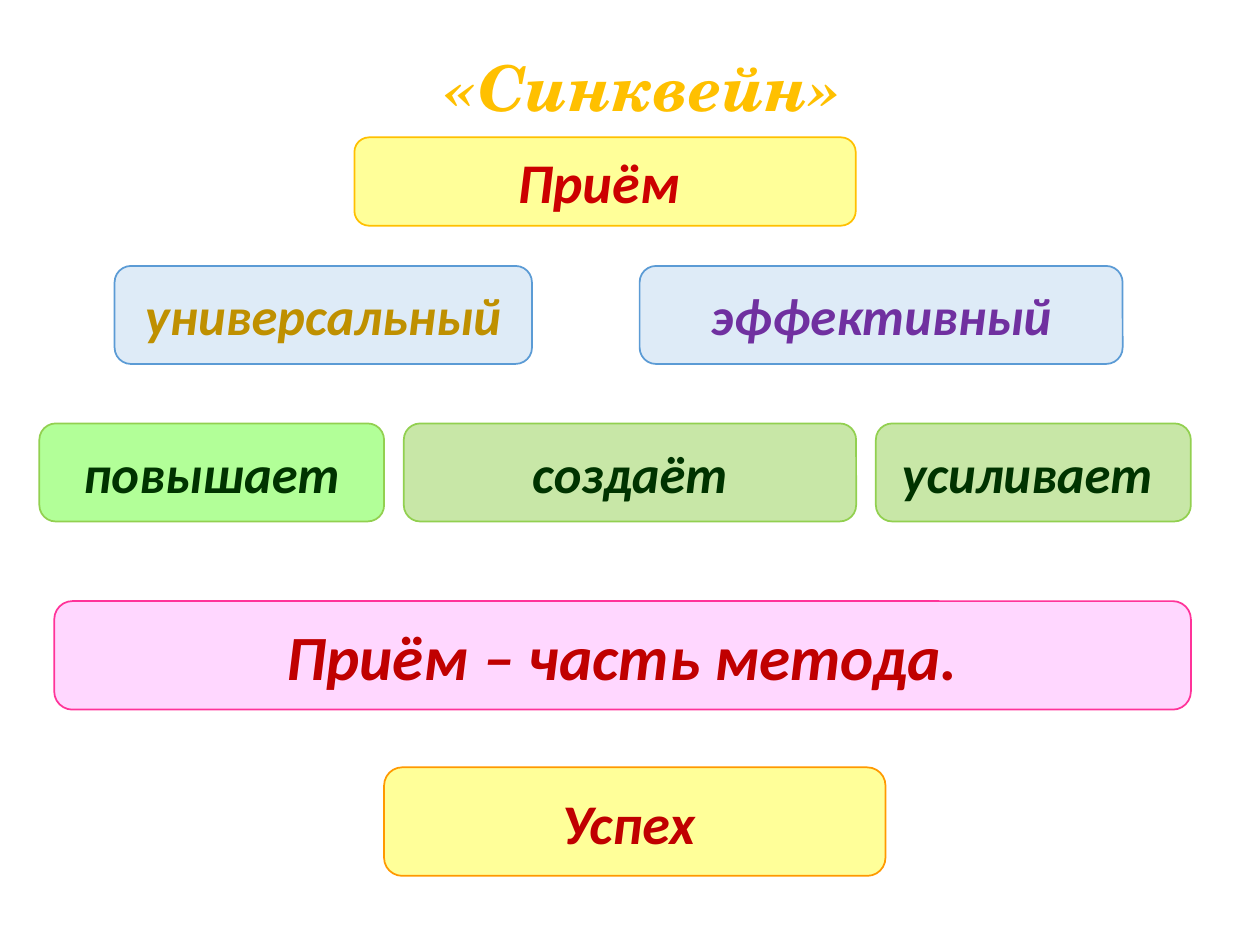
from lxml.etree import SubElement
from pptx import Presentation
from pptx.dml.color import RGBColor
from pptx.enum.shapes import MSO_SHAPE
from pptx.enum.text import MSO_ANCHOR, MSO_AUTO_SIZE, PP_ALIGN
from pptx.oxml.ns import qn
from pptx.util import Pt

GOLD = RGBColor(0xFF, 0xC0, 0x00)
DARK_GOLD = RGBColor(0xBF, 0x90, 0x00)
YELLOW = RGBColor(0xFF, 0xFF, 0x99)
ORANGE = RGBColor(0xFF, 0x99, 0x00)
RED = RGBColor(0xCC, 0x00, 0x00)
DARK_RED = RGBColor(0xC0, 0x00, 0x00)
PALE_BLUE = RGBColor(0xDE, 0xEB, 0xF7)
BLUE = RGBColor(0x5B, 0x9B, 0xD5)
PURPLE = RGBColor(0x70, 0x30, 0xA0)
LIME = RGBColor(0x66, 0xFF, 0x33)
GREEN = RGBColor(0x92, 0xD0, 0x50)
DARK_GREEN = RGBColor(0x00, 0x33, 0x00)
PINK = RGBColor(0xFF, 0xCC, 0xFF)
HOT_PINK = RGBColor(0xFF, 0x33, 0x99)


class CinquainPage:
    title_font = "TeX Gyre Schola"
    body_font = "Calibri"

    def __init__(self, page):
        self.page = page

    def set_text(self, shape, text, font, size, color):
        frame = shape.text_frame
        frame.word_wrap = True
        frame.auto_size = MSO_AUTO_SIZE.NONE
        frame.text = text
        para = frame.paragraphs[0]
        para.alignment = PP_ALIGN.CENTER
        for span in para.runs:
            span.font.name = font
            span.font.size = Pt(size)
            span.font.bold = span.font.italic = True
            span.font.color.rgb = color

    def title(self, text, left, top, width, height):
        title = self.page.shapes.title
        title.left, title.top = Pt(left), Pt(top)
        title.width, title.height = Pt(width), Pt(height)
        self.set_text(title, text, self.title_font, 36, GOLD)
        title.text_frame.vertical_anchor = MSO_ANCHOR.TOP
        title.text_frame.margin_top = 0

    def card(self, text, left, top, width, height, fill, line, color,
             size=30, opacity=100):
        card = self.page.shapes.add_shape(
            MSO_SHAPE.ROUNDED_RECTANGLE, Pt(left), Pt(top), Pt(width), Pt(height))
        card.shadow.inherit = False
        card.fill.solid()
        card.fill.fore_color.rgb = fill
        if opacity < 100:
            shade = card.element.spPr.find(qn("a:solidFill"))[0]
            SubElement(shade, qn("a:alpha"), val=str(opacity * 1000))
        card.line.color.rgb = line
        card.line.width = Pt(1)
        card.text_frame.vertical_anchor = MSO_ANCHOR.MIDDLE
        self.set_text(card, text, self.body_font, size, color)


def main():
    deck = Presentation()
    deck.slide_width, deck.slide_height = Pt(720), Pt(540)
    page = CinquainPage(deck.slides.add_slide(deck.slide_layouts[5]))

    # Title and topic noun
    page.title(" «Синквейн»", 19.5, 27.5, 686, 79)
    page.card("Приём ", 202.5, 78.5, 286.5, 50.5, YELLOW, GOLD, RED, size=32)

    # Two adjectives
    for text, left, width, color in (("универсальный", 65.5, 238.5, DARK_GOLD),
                                     ("эффективный", 365.5, 276, PURPLE)):
        page.card(text, left, 152, width, 56, PALE_BLUE, BLUE, color)

    # Three verbs, evenly spaced
    left, gap = 22.5, 11.25
    for text, width, fill in (("повышает", 197, LIME),
                              ("создаёт", 258.5, GREEN),
                              ("усиливает ", 180, GREEN)):
        page.card(text, left, 242, width, 56, fill, GREEN, DARK_GREEN, opacity=50)
        left += width + gap

    # Sentence and closing noun
    page.card("Приём – часть метода.", 31, 343.5, 649.5, 62,
              PINK, HOT_PINK, DARK_RED, size=36, opacity=77)
    page.card("Успех ", 219.5, 438.5, 286.5, 62, YELLOW, ORANGE, DARK_RED, size=32)

    deck.save("out.pptx")


if __name__ == "__main__":
    main()
